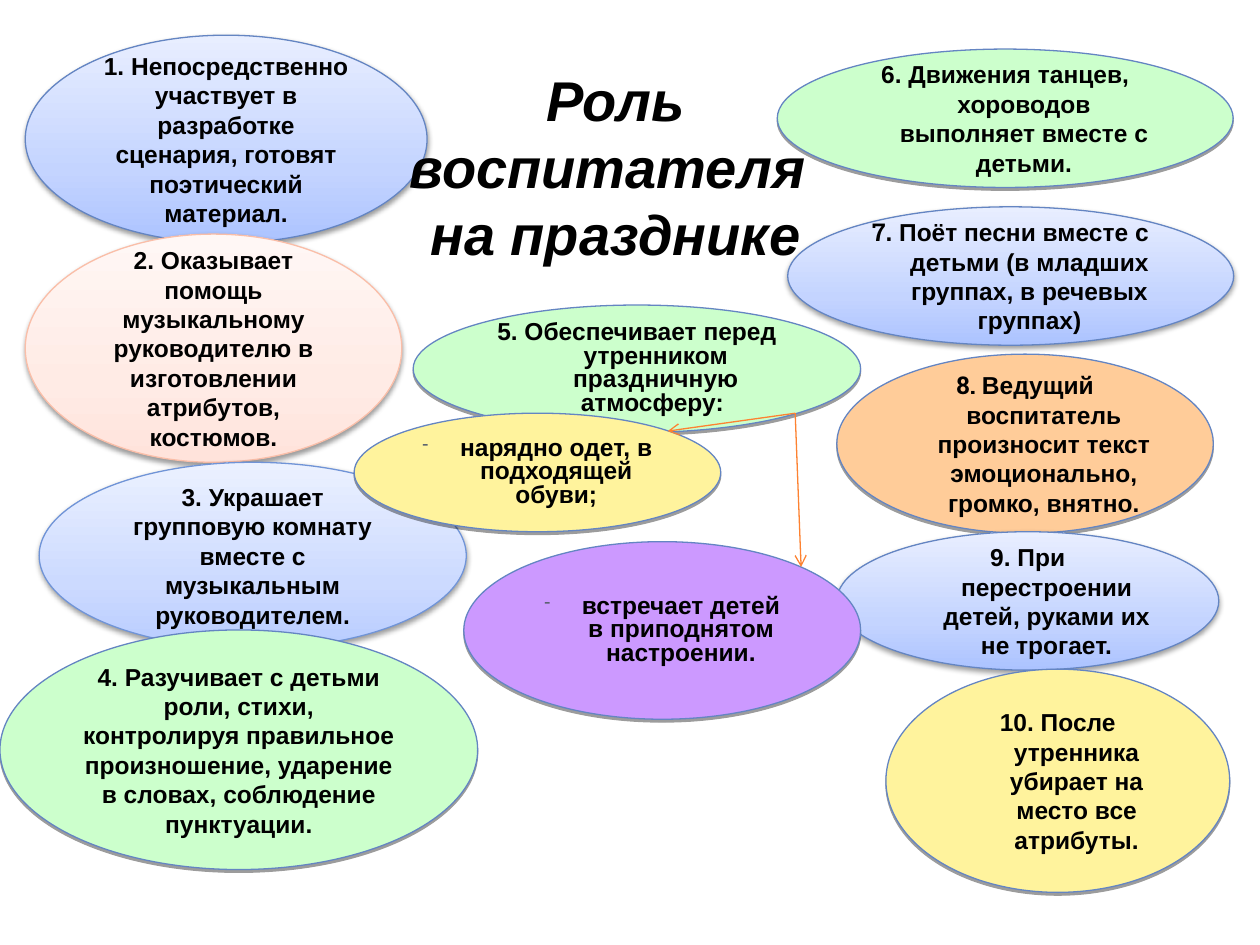
from copy import deepcopy

from lxml import etree
from pptx import Presentation
from pptx import util as u
from pptx.dml.color import RGBColor
from pptx.enum import shapes, text
from pptx.oxml.ns import qn

BLUE = ("ACC3FF", "C4D4FF", "E8EEFF")
PALE_BLUE = ("B8CCFF", "CCDAFF", "EBF1FF")
PINK = ("FFE3DB", "FFEBE5", "FFF7F5")
GREEN, YELLOW, ORANGE, PURPLE = "CCFFCC", "FFF39D", "FFCC99", "CC99FF"
OUTLINE, ARROW, BLACK = "6485C2", "FD8231", "000000"

HANGING = {"indent": 0.76}
TIGHT = {"indent": 0.76, "spacing": 0.8}
DASHED = {"indent": 0.76, "spacing": 0.8, "dash": True}

OVALS = [
    ((0.51, 0.71, 8.1, 4.19), BLUE,
     "1. Непосредственно участвует в разработке сценария, готовят поэтический материал.", {}),
    ((0.51, 4.72, 7.59, 4.6), PINK,
     "2. Оказывает помощь музыкальному руководителю в изготовлении атрибутов, костюмов.",
     {"outline": "FABEA8"}),
    ((16.87, 7.14, 7.59, 3.61), ORANGE,
     "Ведущий воспитатель произносит текст эмоционально, громко, внятно.",
     {"indent": 0.76, "number": "8. ", "margin": 0}),
    ((15.88, 4.17, 8.99, 2.79), BLUE,
     ". Поёт песни вместе с детьми (в младших группах, в речевых группах)",
     {"indent": 0.76, "number": "7"}),
    ((16.87, 10.72, 7.7, 2.79), BLUE,
     "9. При перестроении детей, руками их не трогает.", HANGING),
    ((17.86, 13.49, 6.93, 4.5), YELLOW,
     "10. После утренника убирает на место все атрибуты.", {"indent": 0.76, "margin": 0.1}),
    ((0.79, 9.32, 8.61, 3.76), PALE_BLUE,
     "3. Украшает групповую комнату вместе с музыкальным руководителем.",
     {"outline": "7094D7"}),
    ((15.67, 0.99, 9.19, 2.79), GREEN,
     "6. Движения танцев, хороводов выполняет вместе с детьми.", HANGING),
    ((8.33, 6.15, 9.02, 2.57), GREEN,
     "5. Обеспечивает перед утренником праздничную атмосферу: ", TIGHT),
    ((0, 12.7, 9.63, 4.83), GREEN,
     "4. Разучивает с детьми роли, стихи, контролируя правильное произношение, "
     "ударение в словах, соблюдение пунктуации.", {}),
    ((7.14, 8.33, 7.39, 2.39), YELLOW, "нарядно одет, в подходящей обуви;", DASHED),
    ((9.35, 10.92, 8, 3.58), PURPLE, "встречает детей в приподнятом настроении.", DASHED),
]


def color(value):
    """Turn a hex string into a colour."""
    return RGBColor.from_string(value)


def apply(target, values):
    """Set each named attribute on the target."""
    for name, value in values.items():
        setattr(target, name, value)


def add_node(parent, tag, **attributes):
    """Append a drawing element with the given attributes."""
    return etree.SubElement(parent, qn(tag), {k: str(v) for k, v in attributes.items()})


def add_span(para, words, size=14, font="Arial", italic=False):
    """Add a bold black run to a paragraph."""
    span = para.add_run()
    span.text = words
    apply(span.font, {"name": font, "size": u.Pt(size), "bold": True, "italic": italic})
    span.font.color.rgb = color(BLACK)


def paint(shape, fill):
    """Fill with one colour, or with three from the bottom up."""
    if isinstance(fill, str):
        shape.fill.solid()
        shape.fill.fore_color.rgb = color(fill)
        return
    shape.fill.gradient()
    shape.fill.gradient_angle = 90
    stops = next(shape._element.spPr.iter(qn("a:gsLst")))
    stops.insert(1, deepcopy(stops[0]))
    for stop, position, value in zip(shape.fill.gradient_stops, (0, 0.35, 1), fill):
        stop.position = position
        stop.color.rgb = color(value)


def add_shadow(shape, blur):
    """Drop a soft black shadow straight down."""
    shape.shadow.inherit = False
    effects = shape._element.spPr.find(qn("a:effectLst"))
    shadow = add_node(effects, "a:outerShdw", blurRad=u.Pt(blur), dist=u.Pt(1.6),
                      dir=5400000, rotWithShape=0)
    add_node(add_node(shadow, "a:srgbClr", val=BLACK), "a:alpha", val=38000)


def add_dash(para):
    """Give a paragraph a small grey dash as its bullet."""
    settings = para._p.get_or_add_pPr()
    add_node(add_node(settings, "a:buClr"), "a:srgbClr", val="575F6D")
    add_node(settings, "a:buSzPct", val=73000)
    add_node(settings, "a:buChar", char="-")


def add_oval(page, place, fill, words, outline=OUTLINE, indent=0, spacing=None,
             dash=False, number="", margin=None):
    """Add one shadowed oval with its duty."""
    oval = page.shapes.add_shape(shapes.MSO_SHAPE.OVAL, *map(u.Cm, place))
    paint(oval, fill)
    oval.line.color.rgb = color(outline)
    oval.line.width = u.Pt(0.75)
    add_shadow(oval, 0 if isinstance(fill, str) else 3.1)
    frame = oval.text_frame
    apply(frame, {"word_wrap": True, "vertical_anchor": text.MSO_ANCHOR.MIDDLE})
    if margin is not None:
        sides = ("margin_left", "margin_top", "margin_right", "margin_bottom")
        apply(frame, dict.fromkeys(sides, u.Cm(margin)))
    para = frame.paragraphs[0]
    if dash:
        add_dash(para)
    apply(para, {"alignment": text.PP_ALIGN.CENTER, "line_spacing": spacing})
    if indent:
        settings = para._p.get_or_add_pPr()
        settings.set("marL", str(u.Cm(indent)))
        settings.set("indent", str(-u.Cm(indent)))
    if number:
        add_span(para, number, font="Roboto Slab")
    add_span(para, words)


def add_arrow(page, start, end):
    """Draw a thin line with an open arrowhead."""
    arrow = page.shapes.add_connector(shapes.MSO_CONNECTOR.STRAIGHT,
                                      *map(u.Cm, start + end))
    arrow.line.color.rgb = color(ARROW)
    arrow.line.width = u.Pt(0.75)
    add_node(arrow.line._get_or_add_ln(), "a:tailEnd", type="arrow")
    add_node(arrow._element.spPr, "a:effectLst")


def add_title(page, place, lines):
    """Format the title placeholder and bring it to the front."""
    title = page.shapes.title
    apply(title, dict(zip(("left", "top", "width", "height"), map(u.Cm, place))))
    frame = title.text_frame
    apply(frame, {"word_wrap": True, "vertical_anchor": text.MSO_ANCHOR.TOP,
                  "auto_size": text.MSO_AUTO_SIZE.NONE})
    for index, line in enumerate(lines):
        para = frame.add_paragraph() if index else frame.paragraphs[0]
        para.alignment = text.PP_ALIGN.CENTER
        add_span(para, line, size=32, italic=True)
    title._element.getparent().append(title._element)


def main():
    """Build the slide and save it."""
    deck = Presentation()
    apply(deck, {"slide_width": u.Cm(25.4), "slide_height": u.Cm(19.05)})
    page = deck.slides.add_slide(deck.slide_layouts[5])
    for place, fill, words, options in OVALS:
        add_oval(page, place, fill, words, **options)
    for end in ((16.15, 11.43), (13.46, 8.69)):
        add_arrow(page, (16.03, 8.33), end)
    add_title(page, (6.76, 1.19, 11.3, 4.37), ("Роль воспитателя ", "на празднике"))
    deck.save("out.pptx")


if __name__ == "__main__":
    main()
